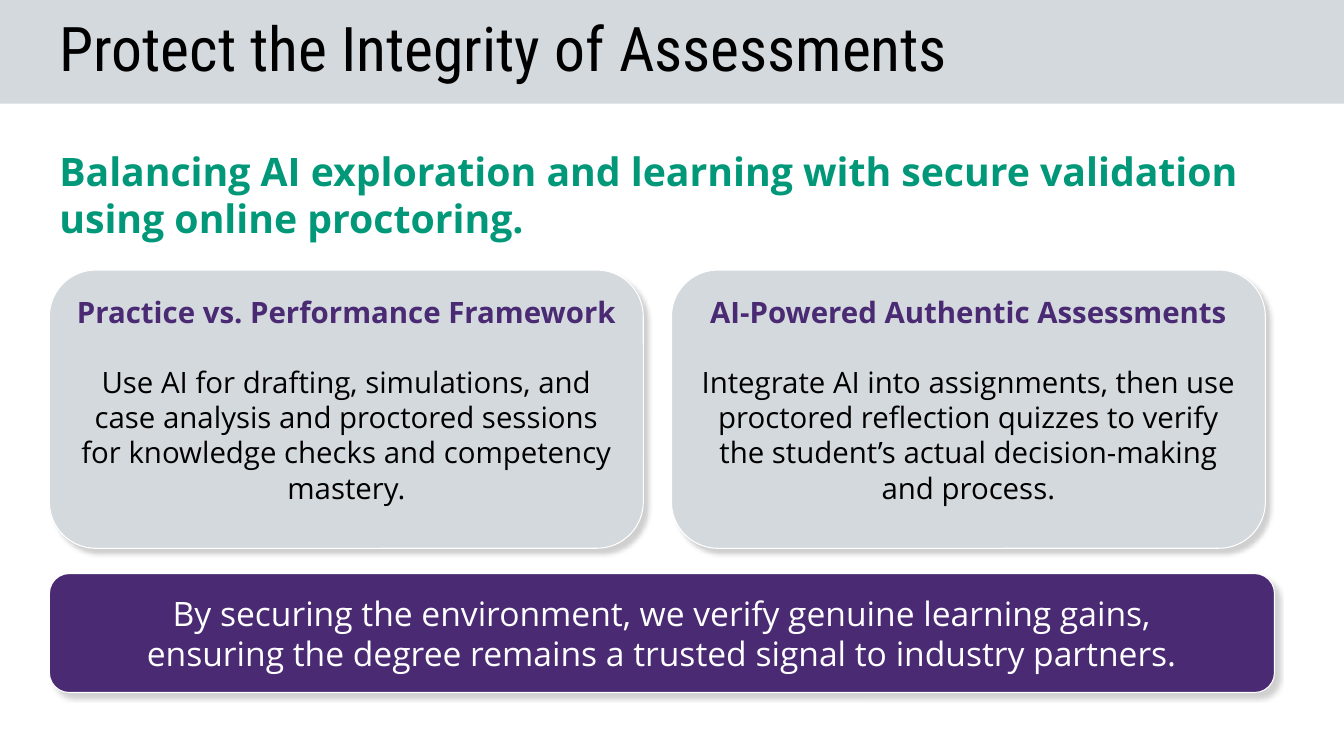
import dataclasses

import pptx
import pptx.dml.color
import pptx.enum.shapes
import pptx.enum.text
import pptx.oxml
import pptx.oxml.ns
import pptx.util

Inches = pptx.util.Inches
Pt = pptx.util.Pt
Color = pptx.dml.color.RGBColor.from_string
Kind = pptx.enum.shapes.MSO_SHAPE
Align = pptx.enum.text.PP_ALIGN
Anchor = pptx.enum.text.MSO_ANCHOR


@dataclasses.dataclass(frozen=True)
class Theme:
    gray: str = "D4D9DD"
    green: str = "009878"
    purple: str = "492A73"
    black: str = "000000"
    white: str = "FFFFFF"
    head: str = "Roboto Condensed"
    body: str = "Open Sans"
    title: int = 44
    lead: int = 28
    bar: int = 24
    card: int = 21


THEME = Theme()
LEFT = 0.49
CARDS = (
    ("Practice vs. Performance Framework",
     "Use AI for drafting, simulations, and case analysis and proctored "
     "sessions for knowledge checks and competency mastery."),
    ("AI-Powered Authentic Assessments",
     "Integrate AI into assignments, then use proctored reflection quizzes "
     "to verify the student’s actual decision-making and process."),
)
CLOSING = (
    "By securing the environment, we verify genuine learning gains,",
    "ensuring the degree remains a trusted signal to industry partners.",
)


def write(frame, text, size, color, font=THEME.body, bold=False,
          align=Align.LEFT, before=0, lines=None):
    para = frame.paragraphs[0]
    if para.runs:
        para = frame.add_paragraph()
        para.space_before = Pt(before)
    para.alignment = align
    if lines:
        para.line_spacing = lines
    run = para.add_run()
    run.text = text
    run.font.name = font
    run.font.size = Pt(size)
    run.font.bold = bold
    run.font.color.rgb = Color(color)


def setup(frame, anchor, side=0.1, edge=0.05):
    frame.word_wrap = True
    frame.vertical_anchor = anchor
    frame.margin_left = frame.margin_right = Inches(side)
    frame.margin_top = frame.margin_bottom = Inches(edge)
    return frame


def label(slide, top, height, anchor):
    box = slide.shapes.add_textbox(
        Inches(LEFT), Inches(top), Inches(12.35), Inches(height))
    return setup(box.text_frame, anchor)


def shade(shape):
    space = pptx.oxml.ns.nsdecls("a")
    shape._element.spPr.append(pptx.oxml.parse_xml(
        f'<a:effectLst {space}><a:outerShdw blurRad="{Pt(3.4)}" '
        f'dist="{Pt(4.5)}" dir="{50 * 60000}" algn="tl" rotWithShape="0">'
        f'<a:srgbClr val="{THEME.black}"><a:alpha val="18000"/></a:srgbClr>'
        '</a:outerShdw></a:effectLst>'))


def panel(slide, left, top, width, height, fill, anchor):
    shape = slide.shapes.add_shape(
        Kind.ROUNDED_RECTANGLE, Inches(left), Inches(top),
        Inches(width), Inches(height))
    shape.fill.solid()
    shape.fill.fore_color.rgb = Color(fill)
    shape.line.color.rgb = Color(THEME.white)
    shape.line.width = Pt(0.75)
    shade(shape)
    return setup(shape.text_frame, anchor, edge=0.1)


def band(slide, width):
    shape = slide.shapes.add_shape(
        Kind.RECTANGLE, 0, 0, width, Inches(1.03))
    shape.shadow.inherit = False
    shape.fill.solid()
    shape.fill.fore_color.rgb = Color(THEME.gray)
    shape.line.fill.background()


def main():
    deck = pptx.Presentation()
    deck.slide_width = Inches(13.33)
    deck.slide_height = Inches(7.5)
    slide = deck.slides.add_slide(deck.slide_layouts[6])

    band(slide, deck.slide_width)
    write(label(slide, 1.2, 1.24, Anchor.BOTTOM),
          "Balancing AI exploration and learning with secure validation "
          "using online proctoring.",
          THEME.lead, THEME.green, bold=True)
    write(label(slide, 0.08, 0.87, Anchor.MIDDLE),
          "Protect the Integrity of Assessments",
          THEME.title, THEME.black, font=THEME.head, lines=0.9)

    for index, (name, detail) in enumerate(CARDS):
        frame = panel(slide, LEFT + index * 6.17, 2.68, 5.89, 2.76,
                      THEME.gray, Anchor.TOP)
        write(frame, name, THEME.card, THEME.purple, bold=True,
              align=Align.CENTER)
        write(frame, detail, THEME.card, THEME.black, align=Align.CENTER,
              before=25)

    frame = panel(slide, LEFT, 5.69, 12.15, 1.18, THEME.purple, Anchor.MIDDLE)
    for line in CLOSING:
        write(frame, line, THEME.bar, THEME.white, align=Align.CENTER)

    deck.save("out.pptx")


if __name__ == "__main__":
    main()
